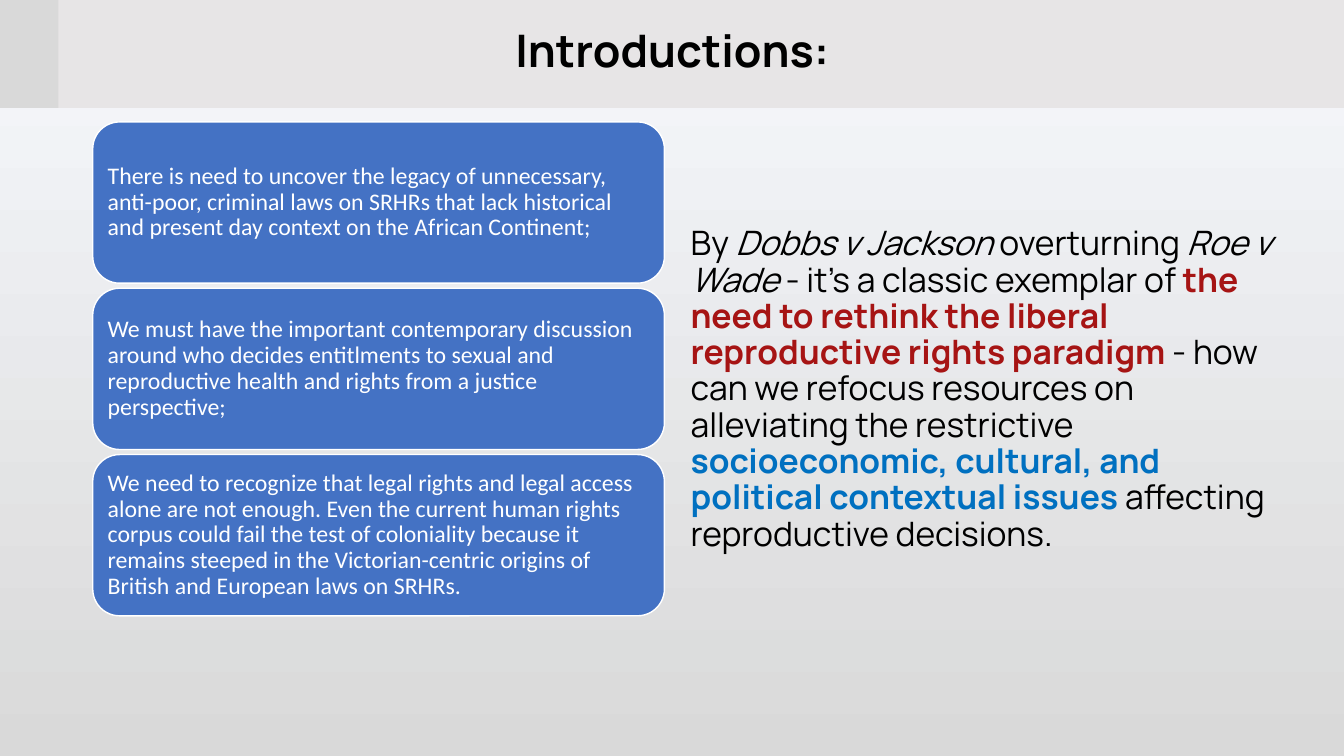
from pptx import Presentation
from pptx.dml.color import RGBColor
from pptx.enum.shapes import MSO_SHAPE as Shape
from pptx.enum.text import MSO_ANCHOR as Anchor, MSO_AUTO_SIZE as AutoSize, PP_ALIGN as Align
from pptx.oxml.ns import qn
from pptx.util import Inches, Pt

BLACK = RGBColor(0x00, 0x00, 0x00)
WHITE = RGBColor(0xFF, 0xFF, 0xFF)
RED = RGBColor(0xA6, 0x14, 0x14)
SKY = RGBColor(0x00, 0x70, 0xC0)
CARD_BLUE = RGBColor(0x44, 0x72, 0xC4)
BAND_GREY = RGBColor(0xE7, 0xE5, 0xE6)
CORNER_GREY = RGBColor(0xD9, 0xD9, 0xD9)
BACKGROUND = (RGBColor(0xF6, 0xF8, 0xFC), RGBColor(0xD9, 0xD9, 0xD9))

TITLE = "Introductions:"
CARDS = [
    "There is need to uncover the legacy of unnecessary, anti-poor, criminal laws on SRHRs "
    "that lack historical and present day context on the African Continent;",
    "We must have the important contemporary discussion around who decides entitlments to "
    "sexual and reproductive health and rights from a justice perspective;",
    "We need to recognize that legal rights and legal access alone are not enough. Even the "
    "current human rights corpus could fail the test of coloniality because it remains steeped "
    "in the Victorian-centric origins of British and European laws on SRHRs.",
]
# text, colour, bold, italic
ARGUMENT = [
    ("By ", BLACK, False, False),
    ("Dobbs v Jackson", BLACK, False, True),
    (" overturning ", BLACK, False, False),
    ("Roe v Wade", BLACK, False, True),
    (" - it’s a classic exemplar of ", BLACK, False, False),
    ("the need to rethink the liberal reproductive rights paradigm ", RED, True, False),
    ("- how can we refocus resources on alleviating the restrictive ", BLACK, False, False),
    ("socioeconomic, cultural, and political contextual issues ", SKY, True, False),
    ("affecting reproductive decisions.", BLACK, False, False),
]
HEADER_HEIGHT = 1.07
HEADER = [(13.33, BAND_GREY), (0.58, CORNER_GREY)]  # width, colour
CARD_LEFT, CARD_TOP, CARD_WIDTH, CARD_HEIGHT, CARD_STEP = 0.92, 1.21, 5.67, 1.6, 1.65


def place(shape, left, top, width, height):
    shape.left, shape.top = Inches(left), Inches(top)
    shape.width, shape.height = Inches(width), Inches(height)


def add_span(para, text, font, size, color, bold=False, italic=False):
    span = para.add_run()
    span.text = text
    span.font.name, span.font.size = font, Pt(size)
    span.font.bold, span.font.italic = bold, italic
    span.font.color.rgb = color


def add_block(page, kind, left, top, width, height, color):
    block = page.shapes.add_shape(
        kind, Inches(left), Inches(top), Inches(width), Inches(height))
    block.shadow.inherit = False
    block.fill.solid()
    block.fill.fore_color.rgb = color
    block.line.fill.background()
    return block


def add_card(page, top, text):
    card = add_block(page, Shape.ROUNDED_RECTANGLE, CARD_LEFT, top,
                     CARD_WIDTH, CARD_HEIGHT, CARD_BLUE)
    card.line.color.rgb = WHITE
    card.line.width = Pt(1)
    frame = card.text_frame
    frame.word_wrap = True
    frame.vertical_anchor = Anchor.MIDDLE
    frame.margin_left = frame.margin_right = Inches(0.07)
    frame.margin_top = frame.margin_bottom = Inches(0.07)
    para = frame.paragraphs[0]
    para.alignment = Align.LEFT
    para.line_spacing = 0.9
    add_span(para, text, "Calibri", 17, WHITE)


def main():
    deck = Presentation()
    deck.slide_width, deck.slide_height = Inches(13.33), Inches(7.5)
    page = deck.slides.add_slide(deck.slide_layouts[1])

    fill = page.background.fill
    fill.gradient()
    fill.gradient_angle = 270
    for stop, color in zip(fill.gradient_stops, BACKGROUND):
        stop.color.rgb = color

    title, body = page.placeholders
    for width, color in HEADER:
        band = add_block(page, Shape.RECTANGLE, 0, 0, width, HEADER_HEIGHT, color)
        title._element.addprevious(band._element)  # behind the title

    place(title, 0.92, 0.23, 11.5, 0.6)
    title.text_frame.vertical_anchor = Anchor.MIDDLE
    title.text_frame.auto_size = AutoSize.NONE
    para = title.text_frame.paragraphs[0]
    para.alignment = Align.CENTER
    para.line_spacing = 0.9
    add_span(para, TITLE, "Manrope", 32, BLACK, bold=True)

    for row, text in enumerate(CARDS):
        add_card(page, CARD_TOP + row * CARD_STEP, text)

    place(body, 6.75, 1.2, 6.19, 5.45)
    frame = body.text_frame
    frame.auto_size = AutoSize.NONE
    frame.vertical_anchor = Anchor.TOP
    frame.margin_top = Inches(1.05)
    para = frame.paragraphs[0]
    properties = para._p.get_or_add_pPr()
    properties.set("marL", "0")
    properties.set("indent", "0")
    properties.append(properties.makeelement(qn("a:buNone"), {}))
    para.line_spacing = 0.9
    para.space_before = Pt(0)
    for text, color, bold, italic in ARGUMENT:
        add_span(para, text, "Manrope", 24, color, bold, italic)

    deck.save("out.pptx")


if __name__ == "__main__":
    main()
